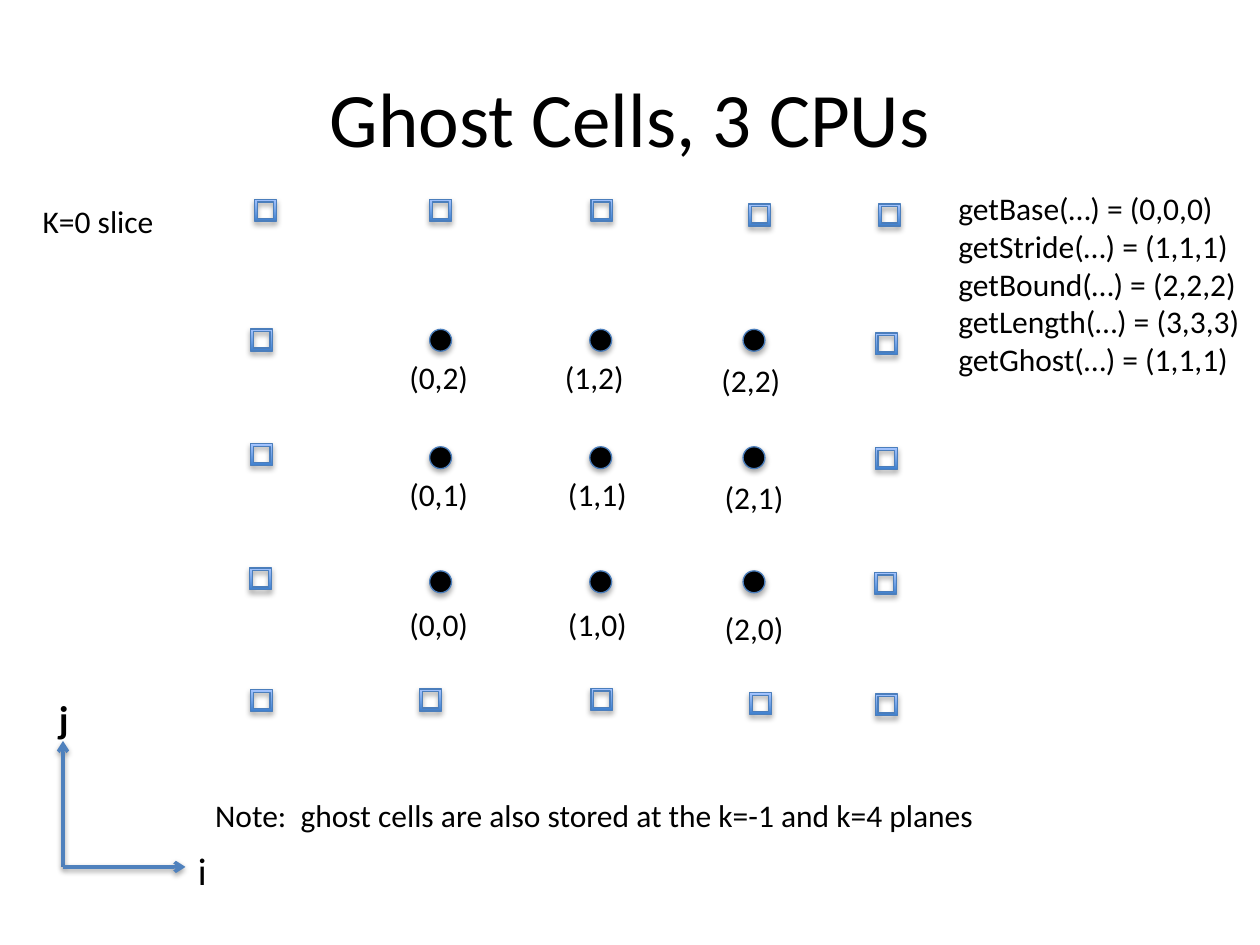
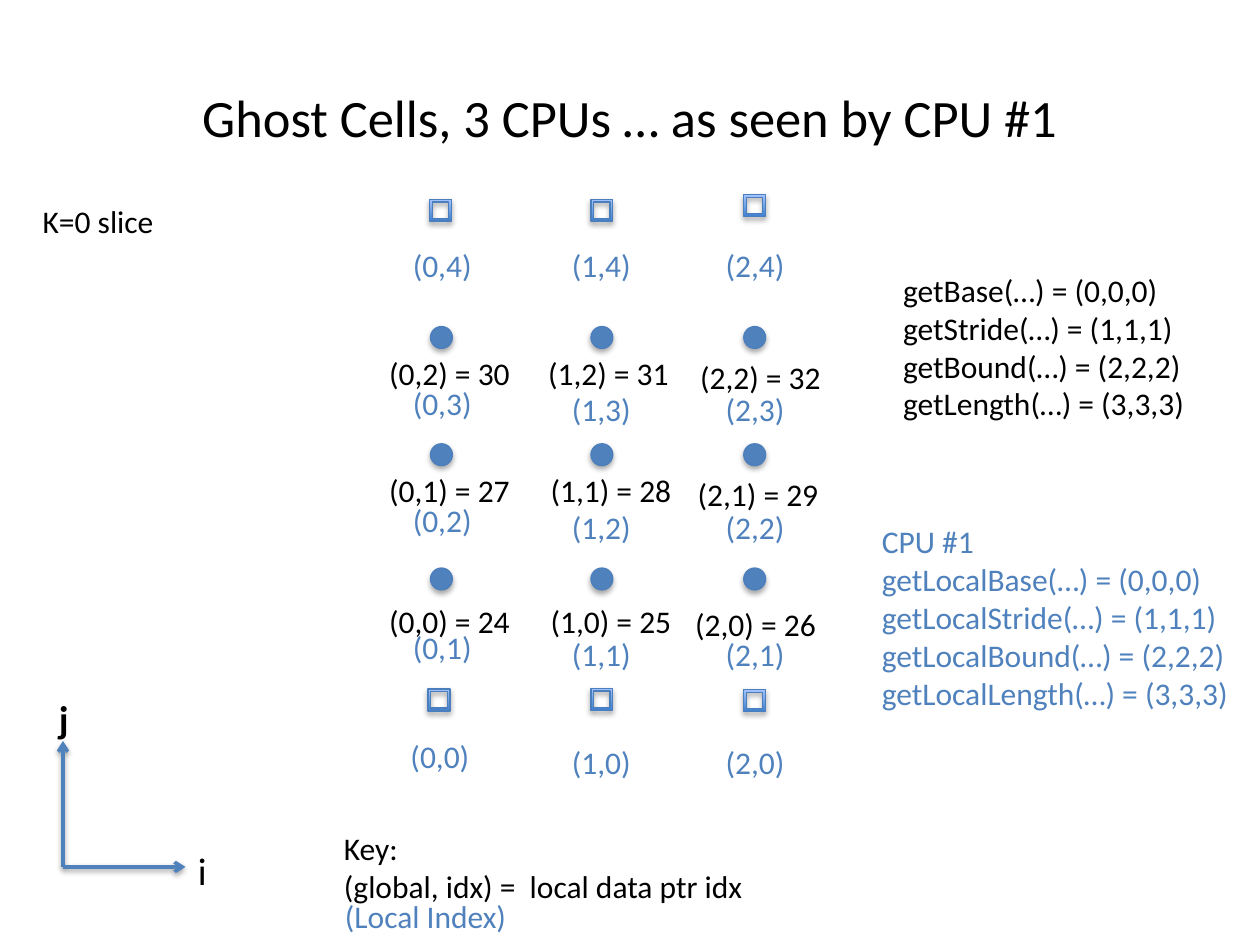
import pptx
import pptx.dml.color
import pptx.enum.dml
import pptx.enum.shapes
import pptx.enum.text
import pptx.oxml
import pptx.oxml.ns
import pptx.util

Pt = pptx.util.Pt
RGBColor = pptx.dml.color.RGBColor
SHAPE = pptx.enum.shapes.MSO_SHAPE
TEXT = pptx.enum.text
qn = pptx.oxml.ns.qn
nsdecls = pptx.oxml.ns.nsdecls

BLACK = RGBColor(0x00, 0x00, 0x00)
BLUE = RGBColor(0x4F, 0x81, 0xBD)
OUTLINE = RGBColor(0x4B, 0x7E, 0xBC)
GHOST_DARK = RGBColor(0x3F, 0x80, 0xCE)
GHOST_LIGHT = RGBColor(0xA4, 0xC4, 0xFF)
FONT = "Calibri"
MARKER = 12.5
LINE_HEIGHT = 22
ORIGIN = (36, 495.4)

CALLS = ["getBase(…) = (0,0,0)", "getStride(…) = (1,1,1)",
         "getBound(…) = (2,2,2)", "getLength(…) = (3,3,3)"]
LOCAL_CALLS = [call.replace("get", "getLocal") for call in CALLS]


def add_text(shapes, lines, left, top, width, size=18, color=BLACK, bold=False):
    box = shapes.add_textbox(Pt(left), Pt(top), Pt(width),
                             Pt(LINE_HEIGHT * size / 18 * len(lines) + 7.2))
    frame = box.text_frame
    frame.word_wrap = False
    frame.auto_size = TEXT.MSO_AUTO_SIZE.SHAPE_TO_FIT_TEXT
    frame.text = "\n".join(lines)
    for paragraph in frame.paragraphs:
        for key, value in dict(name=FONT, size=Pt(size), bold=bold).items():
            setattr(paragraph.font, key, value)
        paragraph.font.color.rgb = color
    return box


def cast_shadow(shape, distance, opacity):
    """Add a soft black shadow straight below; call after fill and line are set."""
    shape.element.spPr.append(pptx.oxml.parse_xml(
        f'<a:effectLst {nsdecls("a")}><a:outerShdw blurRad="{Pt(3.15)}" '
        f'dist="{Pt(distance)}" dir="5400000" rotWithShape="0"><a:srgbClr val="000000">'
        f'<a:alpha val="{opacity * 1000}"/></a:srgbClr></a:outerShdw></a:effectLst>'))


# Left and top of the ghost markers around the 3 x 3 block of cells
all_ghosts = [
    (145.4, 113.8), (245.5, 113.8), (337.7, 113.8), (427.7, 116.6), (502, 116.6),
    (143.3, 188), (143.3, 253.5), (142.6, 324.5),
    (500.2, 190.2), (500.2, 255.7), (499.7, 327),
    (143.3, 394), (239.8, 393.7), (337.7, 393.3), (428.4, 395.8), (500.2, 396.5),
]
cpu_ghosts = [
    (245.5, 113.8), (337.7, 113.8), (425, 111.3),
    (244.6, 393.7), (337.7, 393.3), (425, 394),
]

# Cells are indexed (i, j), with j counted upwards; labels map (i, j) to left and top
cell_labels = {
    (i, j): (f"({i},{j})", left - (1.8 if i and j == 2 else 0), top + (2 if i == 2 else 0))
    for i, left in enumerate((226.8, 317.5, 407))
    for j, top in enumerate((342.3, 267.8, 200.9))
}
pointer_labels = {
    (i, j): (f"({i},{j}) = {24 + 3 * j + i}",
             left + (0, -1.5 if j == 2 else 0, 1.4 * j)[i], top + (2.2 if i == 2 else 0))
    for i, left in enumerate((215.3, 307.6, 390.2))
    for j, top in enumerate((340.2, 265.8, 198.7))
}

views = [
    dict(title="Ghost Cells, 3 CPUs", title_size=44, cell_color=BLACK, ghosts=all_ghosts,
         cell_lefts=(245.5, 337, 424.6), cell_tops=(326.2, 255.3, 188.2),
         labels=cell_labels),
    dict(title="Ghost Cells, 3 CPUs … as seen by CPU #1", title_size=30, cell_color=BLUE,
         ghosts=cpu_ghosts, cell_lefts=(246, 337.7, 425), cell_tops=(324.6, 253.6, 186.6),
         labels=pointer_labels),
]

deck = pptx.Presentation()
deck.slide_width, deck.slide_height = Pt(720), Pt(540)

for view in views:
    slide = deck.slides.add_slide(deck.slide_layouts[6])
    shapes = slide.shapes

    title = add_text(shapes, [view["title"]], 36, 21.6, 648, view["title_size"])
    title_format = dict(word_wrap=True, auto_size=TEXT.MSO_AUTO_SIZE.NONE,
                        vertical_anchor=TEXT.MSO_ANCHOR.MIDDLE)
    for key, value in title_format.items():
        setattr(title.text_frame, key, value)
    title.text_frame.paragraphs[0].alignment = TEXT.PP_ALIGN.CENTER
    title.height = Pt(90)

    # Axes
    axes = shapes.add_group_shape().shapes
    for tip in [(36, 423.4), (106, 495.4)]:
        axis = axes.add_connector(pptx.enum.shapes.MSO_CONNECTOR.STRAIGHT,
                                  *(Pt(length) for length in ORIGIN + tip))
        axis.line.color.rgb = BLUE
        axis.line.width = Pt(2)
        axis.element.spPr.find(qn("a:ln")).append(
            pptx.oxml.parse_xml(f'<a:tailEnd {nsdecls("a")} type="arrow"/>'))
        cast_shadow(axis, 1.57, 38)
    add_text(axes, ["i"], 106, 480.2, 19.4, 22)
    add_text(axes, ["j"], 26.6, 393.8, 20.2, 22, bold=True)

    # Ghost and cell markers
    cells = [(left, top) for left in view["cell_lefts"] for top in view["cell_tops"]]
    for preset, places in [(SHAPE.FRAME, view["ghosts"]), (SHAPE.OVAL, cells)]:
        for left, top in places:
            marker = shapes.add_shape(preset, Pt(left), Pt(top), Pt(MARKER), Pt(MARKER))
            if preset == SHAPE.FRAME:
                marker.fill.gradient()
                marker.fill.gradient_angle = 90
                for stop, color in zip(marker.fill.gradient_stops,
                                       (GHOST_DARK, GHOST_LIGHT)):
                    stop.color.rgb = color
            else:
                marker.fill.solid()
                marker.fill.fore_color.rgb = view["cell_color"]
            marker.line.color.rgb = OUTLINE
            marker.line.width = Pt(0.75)
            cast_shadow(marker, 1.81, 35)

    for label, left, top in view["labels"].values():
        add_text(shapes, [label], left, top, 48.2 if len(label) < 6 else 84.2)
    add_text(shapes, ["K=0 slice"], 17.3, 111.8, 78.5)

# Notes beside the full grid
grid_shapes = deck.slides[0].shapes
add_text(grid_shapes, CALLS + ["getGhost(…) = (1,1,1)"], 540.6, 104.5, 176.4)
add_text(grid_shapes, ["Note:  ghost cells are also stored at the k=-1 and k=4 planes"],
         115.9, 451.4, 456.5)

# Local indices and key for CPU #1
cpu_shapes = deck.slides[1].shapes
for i, left in enumerate((228.8, 319.7, 407.6)):
    for j, top in enumerate((421.2, 359.3, 286.6, 219.6, 136.8)):
        shift = 3.7 if i == 0 and j < 4 else 0
        add_text(cpu_shapes, [f"({i},{j})"], left - (1.3 if i == j == 0 else 0),
                 top - shift, 48.2, color=BLUE)
add_text(cpu_shapes, ["CPU #1"] + LOCAL_CALLS, 496.8, 295, 214.6, color=BLUE)
add_text(cpu_shapes, CALLS, 509, 151.4, 176.4)
add_text(cpu_shapes, ["Key:", "(global, idx) =  local data ptr idx"], 189.4, 470.2, 244.8)
add_text(cpu_shapes, ["(Local Index)"], 190, 508.8, 107.3, color=BLUE)

deck.save("out.pptx")
